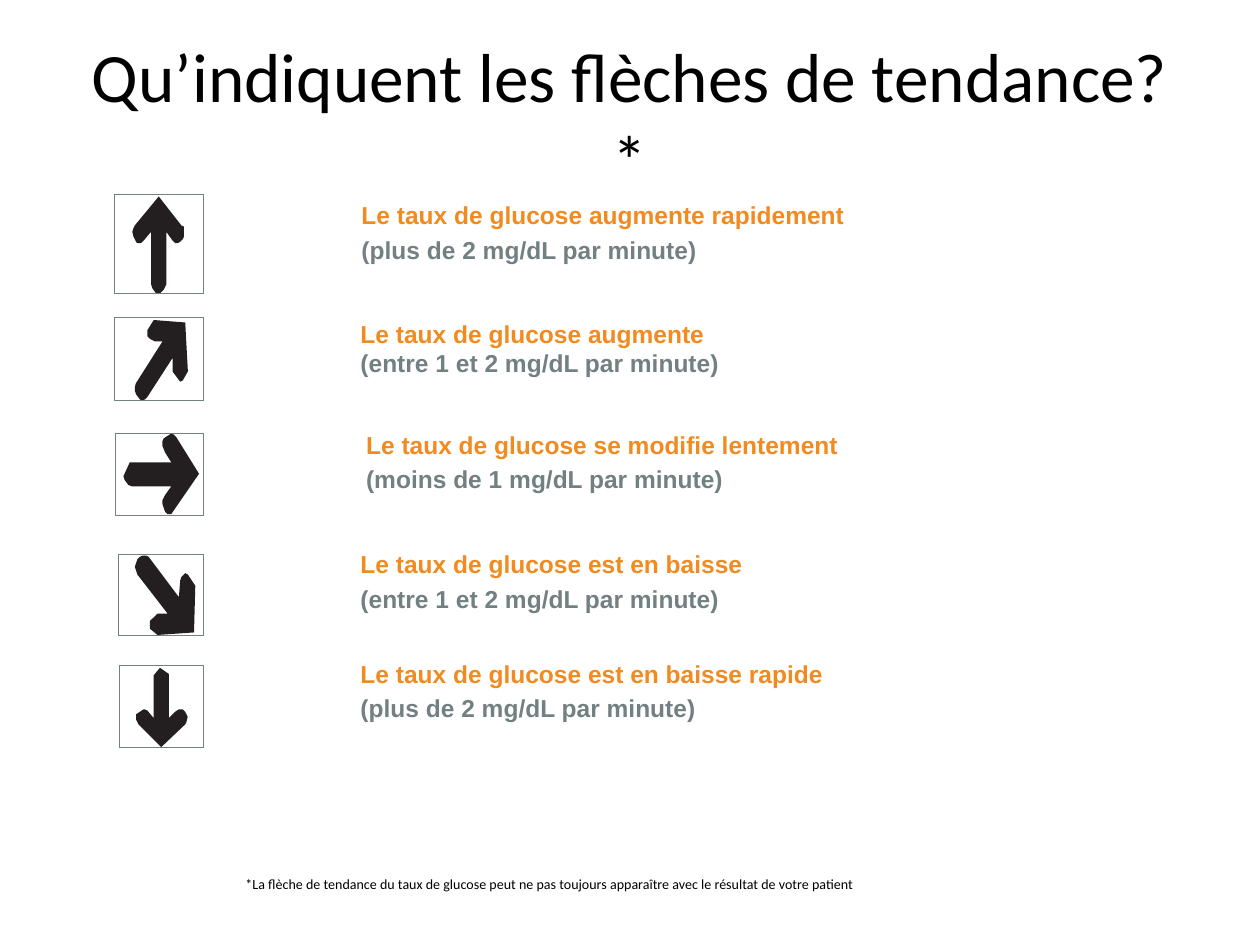
from pptx import Presentation
from pptx.dml.color import RGBColor as RGB
from pptx.enum.text import MSO_ANCHOR as Anchor, MSO_AUTO_SIZE as AutoSize, PP_ALIGN as Align
from pptx.util import Pt

THEME = {
    "black": RGB(0, 0, 0), "arrow": RGB(0x23, 0x1F, 0x20),
    "orange": RGB(0xF1, 0x8B, 0x20), "grey": RGB(0x73, 0x80, 0x81),
    "heading_font": "Calibri", "body_font": "Arial",
    "title": 39.6, "body": 14, "note": 8,
}
GRID = 0.72  # points per unit of the arrow outlines

TITLE = "Qu’indiquent les flèches de tendance?*"
NOTE = ("*La flèche de tendance du taux de glucose peut ne pas toujours "
        "apparaître avec le résultat de votre patient")

# Arrow outlines, in grid units from the slide's top left corner
UP = [(126, 156), (107, 179), (106, 181), (105, 184), (106, 188), (108, 192), (109, 193),
      (112, 193), (114, 191), (120, 184), (120, 226), (121, 229), (124, 233), (127, 233),
      (130, 230), (132, 226), (132, 184), (137, 191), (139, 193), (141, 193), (143, 192),
      (145, 190), (146, 188), (146, 180), (144, 179)]
UP_RIGHT = [(122, 254), (117, 262), (117, 267), (119, 269), (123, 271), (129, 271),
            (108, 304), (107, 307), (107, 310), (108, 313), (111, 317), (113, 318),
            (115, 317), (117, 315), (137, 284), (137, 295), (143, 303), (145, 302),
            (149, 295), (149, 293), (147, 256)]
RIGHT = [(136, 344), (130, 348), (129, 350), (129, 354), (131, 359), (136, 367),
         (103, 367), (98, 378), (99, 381), (102, 385), (105, 386), (136, 386),
         (131, 393), (129, 397), (129, 400), (131, 406), (133, 408), (136, 408),
         (158, 376), (140, 347), (138, 345)]
DOWN_RIGHT = [(113, 441), (111, 442), (109, 444), (107, 450), (109, 456), (133, 487),
              (125, 487), (119, 493), (119, 499), (125, 504), (154, 502), (155, 465),
              (149, 456), (147, 455), (144, 458), (143, 461), (142, 474), (118, 442),
              (116, 441)]
DOWN = [(114, 563), (108, 567), (108, 571), (110, 575), (128, 593), (147, 575),
        (148, 573), (149, 569), (147, 565), (145, 563), (142, 563), (139, 565),
        (134, 570), (134, 535), (127, 530), (122, 536), (122, 570), (117, 564), (115, 563)]

# Outline, frame (left, top, height), text (left, top, width, height), gap, two lines
FRAME_RIGHT = 116.1
ROWS = [
    (UP, (65.5, 111, 56.5), (206.6, 114.5, 479.5, 65), 2.8,
     "Le taux de glucose augmente rapidement", "(plus de 2 mg/dL par minute)"),
    (UP_RIGHT, (65.5, 181.5, 47.5), (206, 182.2, 425, 58.3), 0,
     "Le taux de glucose augmente", "(entre 1 et 2 mg/dL par minute)"),
    (RIGHT, (66, 247.5, 47), (209.2, 245.5, 450, 65), 2.8,
     "Le taux de glucose se modifie lentement", "(moins de 1 mg/dL par minute)"),
    (DOWN_RIGHT, (67.5, 316.6, 46.4), (206, 313.9, 425, 66), 2.8,
     "Le taux de glucose est en baisse", "(entre 1 et 2 mg/dL par minute)"),
    (DOWN, (68.3, 380.3, 46.7), (206, 376.6, 425, 71), 2.8,
     "Le taux de glucose est en baisse rapide", "(plus de 2 mg/dL par minute)"),
]


def style(p, font, size, color, bold=False):
    for r in p.runs:
        r.font.name, r.font.size, r.font.bold = font, Pt(size), bold
        r.font.color.rgb = color


def add_outline(slide, points, scale):
    builder = slide.shapes.build_freeform(*points[0], scale=Pt(scale))
    builder.add_line_segments(points[1:], close=True)
    sp = builder.convert_to_shape()
    sp.shadow.inherit = False
    return sp


def add_arrow(slide, outline):
    sp = add_outline(slide, outline, GRID)
    sp.fill.solid()
    sp.fill.fore_color.rgb = THEME["arrow"]
    sp.line.fill.background()


def add_frame(slide, left, top, height):
    sp = slide.shapes.add_shape(1, Pt(left), Pt(top), Pt(FRAME_RIGHT - left), Pt(height))
    sp.shadow.inherit = False
    sp.fill.background()
    sp.line.color.rgb = THEME["grey"]
    sp.line.width = Pt(0.3)


def add_text(slide, box, text):
    tf = slide.shapes.add_textbox(*map(Pt, box)).text_frame
    tf.word_wrap = True
    tf.text = text
    return tf


def main():
    prs = Presentation()
    prs.slide_width, prs.slide_height = Pt(720), Pt(540)
    slide = prs.slides.add_slide(prs.slide_layouts[5])

    # Title
    title = slide.shapes.title
    title.left, title.top, title.width, title.height = map(Pt, (36, 21.6, 648, 90))
    tf = title.text_frame
    tf.text = TITLE
    tf.word_wrap, tf.auto_size = True, AutoSize.NONE
    tf.vertical_anchor = Anchor.MIDDLE
    tf.paragraphs[0].alignment = Align.CENTER
    style(tf.paragraphs[0], THEME["heading_font"], THEME["title"], THEME["black"])

    # One framed arrow and its meaning per row
    for outline, frame, box, gap, trend, rate in ROWS:
        add_arrow(slide, outline)
        add_frame(slide, *frame)
        tf = add_text(slide, box, f"{trend}\n{rate}")
        tf.margin_left = tf.margin_top = tf.margin_right = tf.margin_bottom = 0
        for p, color in zip(tf.paragraphs, ("orange", "grey")):
            style(p, THEME["body_font"], THEME["body"], THEME[color], bold=True)
        tf.paragraphs[1].space_before = Pt(gap)

    # Footnote
    tf = add_text(slide, (133.2, 496.8, 470.9, 17.3), NOTE)
    tf.auto_size = AutoSize.SHAPE_TO_FIT_TEXT
    style(tf.paragraphs[0], THEME["heading_font"], THEME["note"], THEME["black"])

    prs.save("out.pptx")


if __name__ == "__main__":
    main()
